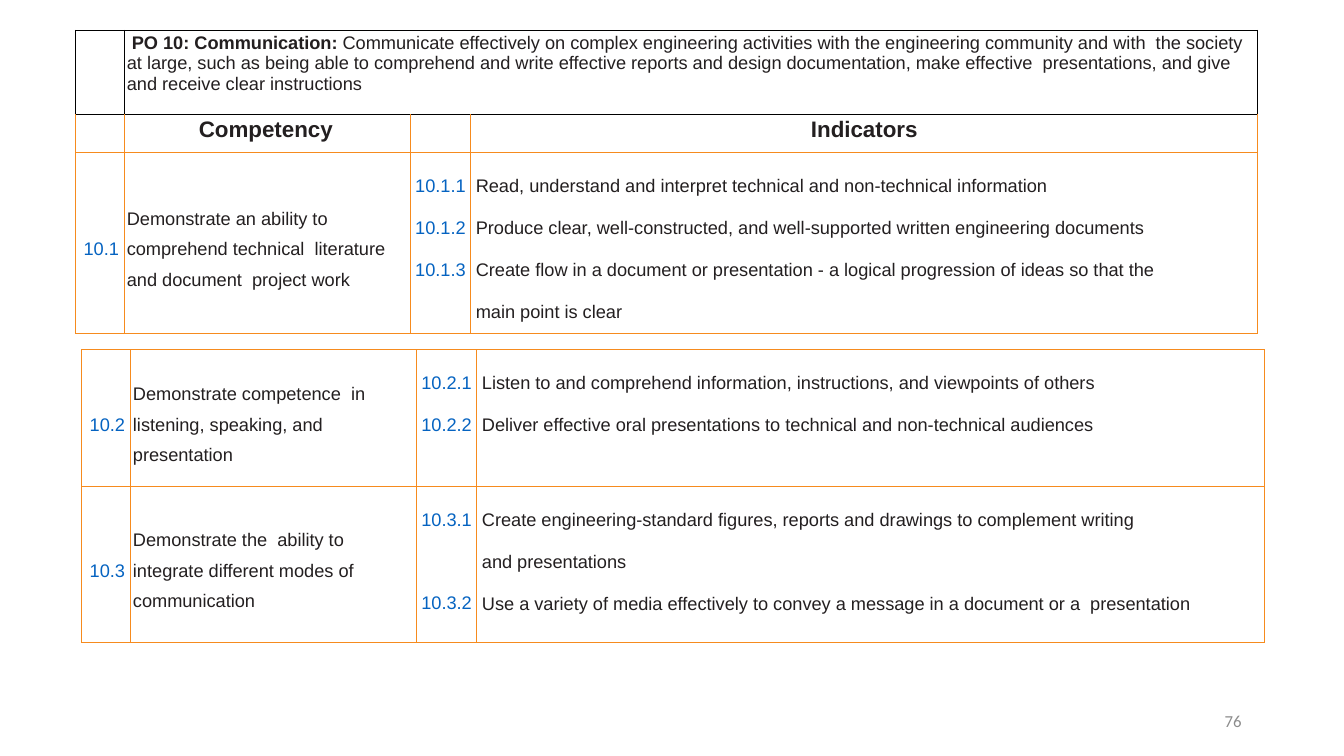
from dataclasses import dataclass

from lxml import etree
from pptx import Presentation
from pptx import util as u
from pptx.dml.color import RGBColor
from pptx.enum import text
from pptx.oxml.ns import qn

LEFT, CENTER, RIGHT = text.PP_ALIGN.LEFT, text.PP_ALIGN.CENTER, text.PP_ALIGN.RIGHT
TOP, MIDDLE = text.MSO_ANCHOR.TOP, text.MSO_ANCHOR.MIDDLE


@dataclass(frozen=True)
class Theme:
    font: str = "Arial"
    number_font: str = "Calibri"
    ink: str = "231F20"
    code: str = "0563C1"
    grid: str = "F68B1E"
    frame: str = "000000"
    muted: str = "8C8C8C"
    body: float = 13
    heading: float = 16
    page: float = 12


COLS = [34.6, 204.4, 43.3, 562.3]
OUTCOME = (
    "PO 10: Communication: ",
    "Communicate effectively on complex engineering activities with the engineering "
    "community and with  the society at large, such as being able to comprehend and write "
    "effective reports and design documentation, make effective  presentations, and give "
    "and receive clear instructions",
)

# Each competency: code, lines, indicators as (code, lines)
WORK = ("10.1",
        ["Demonstrate an ability to", "comprehend technical  literature",
         "and document  project work"],
        [("10.1.1", ["Read, understand and interpret technical and non-technical information"]),
         ("10.1.2", ["Produce clear, well-constructed, and well-supported written "
                     "engineering documents"]),
         ("10.1.3", ["Create flow in a document or presentation - a logical progression "
                     "of ideas so that the", "main point is clear"])])
LISTENING = ("10.2",
             ["Demonstrate competence  in", "listening, speaking, and", "presentation"],
             [("10.2.1", ["Listen to and comprehend information, instructions, and "
                          "viewpoints of others"]),
              ("10.2.2", ["Deliver effective oral presentations to technical and "
                          "non-technical audiences"])])
MODES = ("10.3",
         ["Demonstrate the  ability to", "integrate different modes of", "communication"],
         [("10.3.1", ["Create engineering-standard figures, reports and drawings to "
                      "complement writing", "and presentations"]),
          ("10.3.2", ["Use a variety of media effectively to convey a message in a "
                      "document or a  presentation"])])


class Deck:
    def __init__(self, theme):
        self.theme = theme
        self.prs = Presentation()
        self.prs.slide_width, self.prs.slide_height = u.Pt(960), u.Pt(540)
        self.s = self.prs.slides.add_slide(self.prs.slide_layouts[6])

    def style(self, p, size, color, font=None, bold=False, align=LEFT):
        p.alignment = align
        f = p.font
        f.name, f.size, f.bold = font or self.theme.font, u.Pt(size), bold
        f.color.rgb = RGBColor.from_string(color)

    def table(self, left, top, heights):
        frame = self.s.shapes.add_table(len(heights), len(COLS), u.Pt(left), u.Pt(top),
                                        u.Pt(sum(COLS)), u.Pt(sum(heights)))
        tbl = frame.table
        tbl.first_row = tbl.horz_banding = False
        for col, width in zip(tbl.columns, COLS):
            col.width = u.Pt(width)
        for row, height in zip(tbl.rows, heights):
            row.height = u.Pt(height)
            for cell in row.cells:
                self.borders(cell, dict.fromkeys("LRTB", self.theme.grid))
                cell.margin_left = cell.margin_right = cell.margin_bottom = 0
                cell.margin_top = u.Pt(2)
                cell.fill.background()
        return tbl

    def borders(self, cell, colors):
        """Replace the given sides (L, R, T, B), keeping them ahead of the cell fill."""
        tc_pr = cell._tc.get_or_add_tcPr()
        for i, (side, color) in enumerate(colors.items()):
            for old in tc_pr.findall(qn(f"a:ln{side}")):
                tc_pr.remove(old)
            ln = etree.Element(qn(f"a:ln{side}"), w=str(u.Pt(0.75)))
            fill = etree.SubElement(ln, qn("a:solidFill"))
            etree.SubElement(fill, qn("a:srgbClr"), val=color)
            tc_pr.insert(i, ln)

    def lines(self, cell, items, color, spacing=1.0, before=None, anchor=TOP,
              size=None, bold=False, align=LEFT, indent=0):
        cell.vertical_anchor = anchor
        tf = cell.text_frame
        for i, item in enumerate(items):
            p = tf.add_paragraph() if i else tf.paragraphs[0]
            p.text = item
            self.style(p, size or self.theme.body, color, bold=bold, align=align)
            p.line_spacing = spacing
            p.space_before = u.Pt(before[i] if before else 0)
            p._p.get_or_add_pPr().set("marL", str(u.Pt(indent)))

    def outcome(self, tbl):
        t = self.theme
        for cell in tbl.rows[0].cells:
            self.borders(cell, dict.fromkeys("LRTB", t.frame))
        for cell in tbl.rows[1].cells:
            self.borders(cell, dict(L=t.grid, R=t.grid, T=t.frame, B=t.grid))
        cell = tbl.cell(0, 1)
        cell.merge(tbl.cell(0, 3))
        p = cell.text_frame.paragraphs[0]
        self.style(p, t.body, t.ink)
        p_pr = p._p.get_or_add_pPr()
        p_pr.set("marL", str(u.Pt(2)))
        p_pr.set("indent", str(u.Pt(3.6)))
        for words, bold in zip(OUTCOME, (True, False)):
            r = p.add_run()
            r.text, r.font.bold = words, bold

    def headings(self, tbl, row):
        look = dict(color=self.theme.ink, size=self.theme.heading, bold=True)
        self.lines(tbl.cell(row, 1), ["Competency"], indent=53.4, **look)
        self.lines(tbl.cell(row, 3), ["Indicators"], align=CENTER, **look)

    def competency(self, tbl, row, content, follow_gap=1):
        """follow_gap is the space before an indicator that follows a wrapped one."""
        t = self.theme
        number, ability, indicators = content
        codes = [code for code, _ in indicators]
        points = [line for _, lines in indicators for line in lines]
        wrapped = [False] + [len(lines) > 1 for _, lines in indicators[:-1]]
        gaps = [0] + [follow_gap if w else 1 for w in wrapped[1:]]
        cells = tbl.rows[row].cells
        self.lines(cells[0], [number], t.code, 1.5, anchor=MIDDLE, align=CENTER, indent=2)
        self.lines(cells[1], ability, t.ink, 1.5, anchor=MIDDLE, indent=2)
        self.lines(cells[2], codes, t.code, 2.0, gaps, align=CENTER)
        self.lines(cells[3], points, t.ink, 2.0, [0] + [1] * (len(points) - 1), indent=3.6)

    def page_number(self, number):
        box = self.s.shapes.add_textbox(u.Pt(678), u.Pt(500.4), u.Pt(216), u.Pt(28.8))
        tf = box.text_frame
        tf.word_wrap, tf.vertical_anchor = True, MIDDLE
        p = tf.paragraphs[0]
        p.text = number
        self.style(p, self.theme.page, self.theme.muted, self.theme.number_font, align=RIGHT)


def main():
    deck = Deck(Theme())
    upper = deck.table(54, 21.6, [60.4, 27.2, 129])
    deck.outcome(upper)
    deck.headings(upper, 1)
    deck.competency(upper, 2, WORK)
    lower = deck.table(58.4, 249.8, [98, 111])
    deck.competency(lower, 0, LISTENING)
    deck.competency(lower, 1, MODES, follow_gap=30)
    deck.page_number("76")
    deck.prs.save("out.pptx")


if __name__ == "__main__":
    main()
